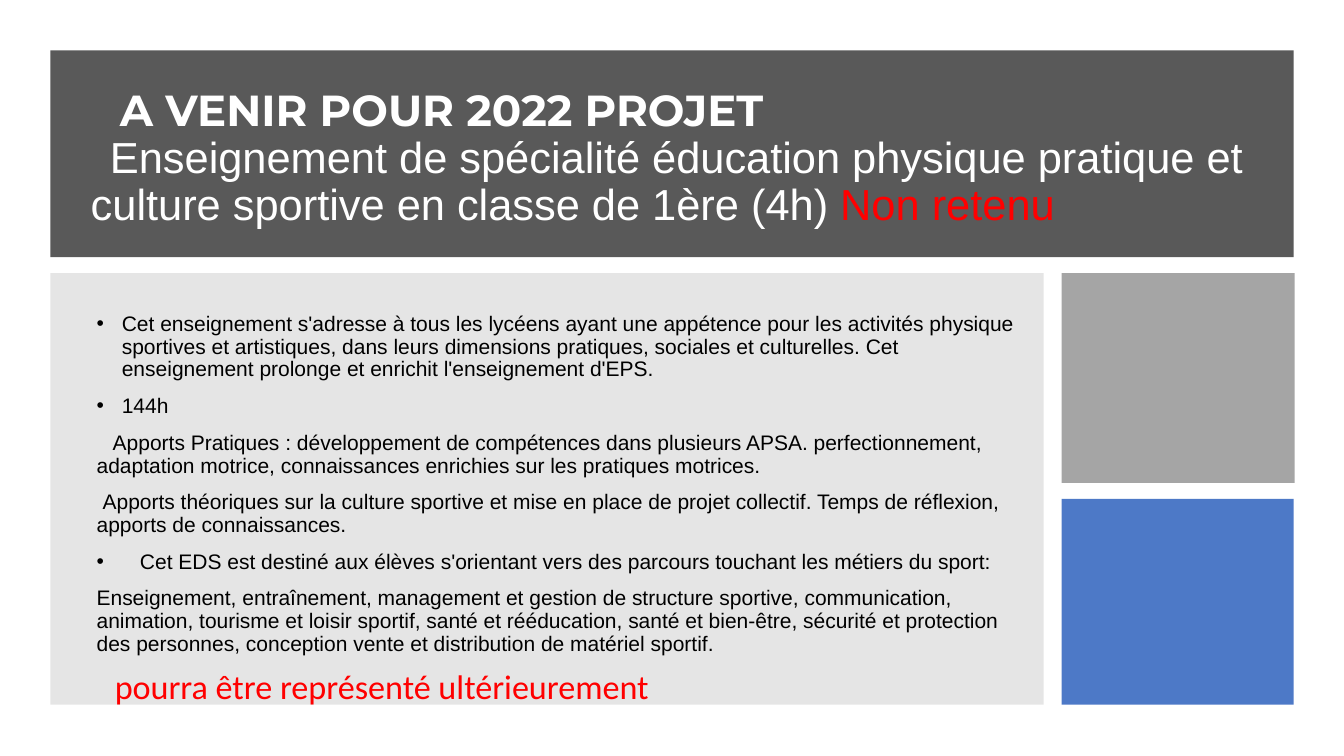
import pptx
import pptx.util
import pptx.dml.color
import pptx.enum.shapes
import pptx.enum.text
import pptx.oxml.ns
from lxml import etree

HUES = {
    "white": "FFFFFF", "black": "000000", "red": "FF0000", "dark": "595959",
    "pale": "808080", "grey": "A5A5A5", "blue": "4472C4",
}
SCALE = 9144  # EMU in one px, 100 px to the inch


def px(num):
    return pptx.util.Emu(num * SCALE)


def rgb(hue):
    return pptx.dml.color.RGBColor.from_string(HUES[hue])


def sub(node, tag, **attrs):
    return etree.SubElement(node, pptx.oxml.ns.qn(tag), attrs)


def write(para, text, font="Arial", size=15, hue="black", bold=False):
    run = para.add_run()
    run.text = text
    run.font.name = font
    run.font.size = pptx.util.Pt(size)
    run.font.bold = bold
    run.font.color.rgb = rgb(hue)


class Deck:
    def __init__(self):
        self.prs = pptx.Presentation()
        self.prs.slide_width, self.prs.slide_height = px(1333), px(750)
        self.slide = self.prs.slides.add_slide(self.prs.slide_layouts[5])

    def block(self, box, hue, alpha=100):
        kind = pptx.enum.shapes.MSO_SHAPE.RECTANGLE
        shape = self.slide.shapes.add_shape(kind, *map(px, box))
        shape.shadow.inherit = False
        shape.line.fill.background()
        shape.fill.solid()
        shape.fill.fore_color.rgb = rgb(hue)
        if alpha < 100:
            clr = shape.fill._xPr.find(".//" + pptx.oxml.ns.qn("a:srgbClr"))
            sub(clr, "a:alpha", val=str(alpha * 1000))

    def frame(self, shape, anchor):
        frame = shape.text_frame
        frame.word_wrap = True
        frame.auto_size = pptx.enum.text.MSO_AUTO_SIZE.NONE
        frame.vertical_anchor = anchor
        return frame

    def title(self, box):
        shape = self.slide.shapes.title
        shape.left, shape.top, shape.width, shape.height = map(px, box)
        self.slide.shapes._spTree.append(shape._element)  # bring to front
        return self.frame(shape, pptx.enum.text.MSO_ANCHOR.MIDDLE)

    def text(self, box):
        shape = self.slide.shapes.add_textbox(*map(px, box))
        return self.frame(shape, pptx.enum.text.MSO_ANCHOR.TOP)

    def para(self, frame, left=0, first=0, gap=0, dot=False):
        para = frame.paragraphs[0]
        if para.runs:
            para = frame.add_paragraph()
        para.alignment = pptx.enum.text.PP_ALIGN.LEFT
        para.line_spacing = 0.9
        para.space_before = pptx.util.Pt(gap)
        props = para._p.get_or_add_pPr()
        props.set("marL", str(px(left)))
        props.set("indent", str(px(first)))
        if dot:
            sub(sub(props, "a:buClr"), "a:srgbClr", val=HUES["black"])
            sub(props, "a:buFont", typeface="Arial")
            sub(props, "a:buChar", char="•")
        else:
            sub(props, "a:buNone")
        return para


def main():
    deck = Deck()

    # Panels
    deck.block((50, 50, 1233, 205), "dark")
    deck.block((50, 271, 985, 428), "pale", alpha=20)
    deck.block((1053, 271, 231, 208), "grey")
    deck.block((1053, 495, 230, 204), "blue", alpha=95)

    # Title
    head = deck.title((80, 80, 1166, 156))
    write(deck.para(head, first=29), "A VENIR POUR 2022 PROJET",
          font="Montserrat", size=31, hue="white", bold=True)
    para = deck.para(head, first=19)
    write(para, "Enseignement de spécialité éducation physique pratique et "
          "culture sportive en classe de 1ère (4h) ", size=31, hue="white")
    write(para, "Non retenu", size=31, hue="red")

    # Body: left margin, first-line indent, bullet, text
    items = [
        (25, -25, True, "Cet enseignement s'adresse à tous les lycéens ayant une "
         "appétence pour les activités physique sportives et artistiques, dans "
         "leurs dimensions pratiques, sociales et culturelles. Cet enseignement "
         "prolonge et enrichit l'enseignement d'EPS."),
        (25, -25, True, "144h"),
        (0, 16, False, "Apports Pratiques : développement de compétences dans "
         "plusieurs APSA. perfectionnement, adaptation motrice, connaissances "
         "enrichies sur les pratiques motrices."),
        (0, 6, False, "Apports théoriques sur la culture sportive et mise en place "
         "de projet collectif. Temps de réflexion, apports de connaissances."),
        (43, -43, True, "Cet EDS est destiné aux élèves s'orientant vers des "
         "parcours touchant les métiers du sport:"),
        (0, 0, False, "Enseignement, entraînement, management et gestion de "
         "structure sportive, communication, animation, tourisme et loisir "
         "sportif, santé et rééducation, santé et bien-être, sécurité et "
         "protection des personnes, conception vente et distribution de "
         "matériel sportif."),
    ]
    body = deck.text((86, 306, 948, 419))
    for num, (left, first, dot, text) in enumerate(items):
        gap = 10 if num else 0
        write(deck.para(body, left, first, gap, dot), text)
    write(deck.para(body, first=18, gap=10),
          "pourra être représenté ultérieurement",
          font="Calibri", size=24.4, hue="red")

    deck.prs.save("out.pptx")


if __name__ == "__main__":
    main()
